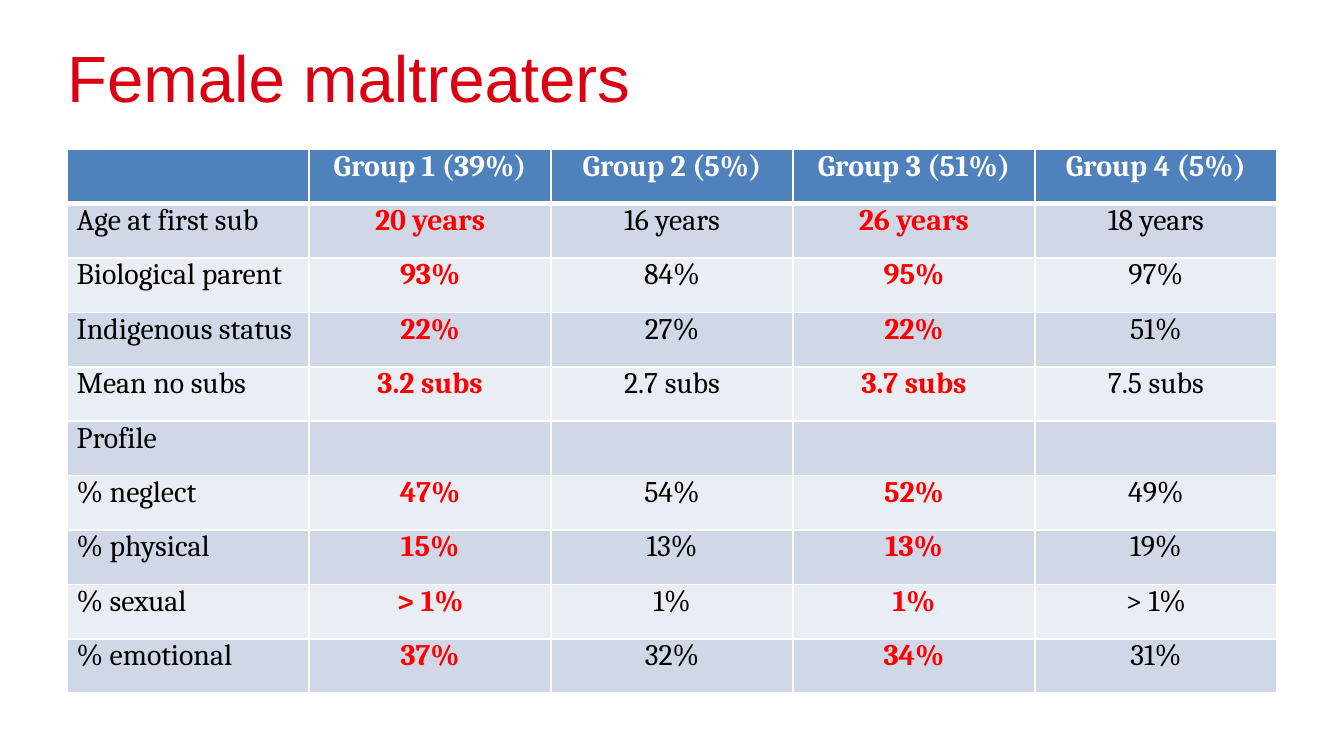
from dataclasses import dataclass

from lxml.etree import fromstring
from pptx import Presentation
from pptx.dml.color import RGBColor
from pptx.enum.text import MSO_ANCHOR, PP_ALIGN
from pptx.util import Pt


@dataclass(frozen=True)
class Theme:
    """Colours, fonts and type sizes of the slide."""
    title: str = "DA0012"
    header: str = "4F81BD"
    bands: tuple = ("D0D8E8", "E9EDF4")
    white: str = "FFFFFF"
    body: str = "000000"
    highlight: str = "FF0000"
    title_font: str = "Arial"
    table_font: str = "Cambria"
    title_size: int = 35
    table_size: int = 16


THEME = Theme()
DRAWING = "http://schemas.openxmlformats.org/drawingml/2006/main"
HIGHLIGHTED_COLUMNS = (1, 3)
ROWS = (
    ("", "Group 1 (39%)", "Group 2 (5%)", "Group 3 (51%)", "Group 4 (5%)"),
    ("Age at first sub", "20 years", "16 years", "26 years", "18 years"),
    ("Biological parent", "93%", "84%", "95%", "97%"),
    ("Indigenous status", "22%", "27%", "22%", "51%"),
    ("Mean no subs", "3.2 subs", "2.7 subs", "3.7 subs", "7.5 subs"),
    ("Profile", "", "", "", ""),
    ("% neglect", "47%", "54%", "52%", "49%"),
    ("% physical", "15%", "13%", "13%", "19%"),
    ("% sexual", "> 1%", "1%", "1%", "> 1%"),
    ("% emotional", "37%", "32%", "34%", "31%"),
)


def style_font(font, name, size, color, bold=False):
    """Set the face, size, colour and weight of a font."""
    font.name = name
    font.size = Pt(size)
    font.bold = bold
    font.color.rgb = RGBColor.from_string(color)


def add_title(page, text):
    """Place and format the title placeholder."""
    title = page.shapes.title
    title.left, title.top, title.width, title.height = Pt(36), Pt(23), Pt(648), Pt(43.2)
    frame = title.text_frame
    frame.text = text
    frame.word_wrap = True
    frame.vertical_anchor = MSO_ANCHOR.MIDDLE
    frame.margin_left = frame.margin_right = frame.margin_top = frame.margin_bottom = Pt(0)
    para = frame.paragraphs[0]
    para.alignment = PP_ALIGN.LEFT
    para.line_spacing = 0.8
    style_font(para.font, THEME.title_font, THEME.title_size, THEME.title)


def set_borders(cell, widths):
    """Draw white borders of the given widths: left, right, top, bottom."""
    properties = cell._tc.get_or_add_tcPr()
    for position, (side, width) in enumerate(zip("LRTB", widths)):
        line = fromstring(
            f'<a:ln{side} xmlns:a="{DRAWING}" w="{Pt(width)}"><a:solidFill>'
            f'<a:srgbClr val="{THEME.white}"/></a:solidFill></a:ln{side}>'
        )
        properties.insert(position, line)


def fill_cell(cell, text, row, column):
    """Write and format one cell according to its row and column."""
    is_header = row == 0
    is_highlighted = not is_header and column in HIGHLIGHTED_COLUMNS
    color = THEME.white if is_header else THEME.highlight if is_highlighted else THEME.body
    cell.text = text
    cell.margin_left = cell.margin_right = Pt(5.1)
    cell.margin_top = cell.margin_bottom = Pt(0)
    cell.vertical_anchor = MSO_ANCHOR.TOP
    cell.fill.solid()
    fill = THEME.header if is_header else THEME.bands[(row - 1) % 2]
    cell.fill.fore_color.rgb = RGBColor.from_string(fill)
    para = cell.text_frame.paragraphs[0]
    para.alignment = PP_ALIGN.CENTER if column else PP_ALIGN.LEFT
    style_font(para.font, THEME.table_font, THEME.table_size, color, is_header or is_highlighted)
    set_borders(cell, (1, 1, 3 if row == 1 else 1, 3 if is_header else 1))


def add_group_table(page):
    """Add the table that compares the four groups."""
    row_height = 29.15
    frame = page.shapes.add_table(
        len(ROWS), len(ROWS[0]), Pt(36), Pt(80), Pt(648), Pt(row_height * len(ROWS))
    )
    table = frame.table
    for row, texts in enumerate(ROWS):
        table.rows[row].height = Pt(row_height)
        for column, text in enumerate(texts):
            fill_cell(table.cell(row, column), text, row, column)


def main():
    """Build and save the slide."""
    deck = Presentation()
    deck.slide_width, deck.slide_height = Pt(720), Pt(405)
    page = deck.slides.add_slide(deck.slide_layouts[5])
    add_title(page, "Female maltreaters")
    add_group_table(page)
    deck.save("out.pptx")


if __name__ == "__main__":
    main()
